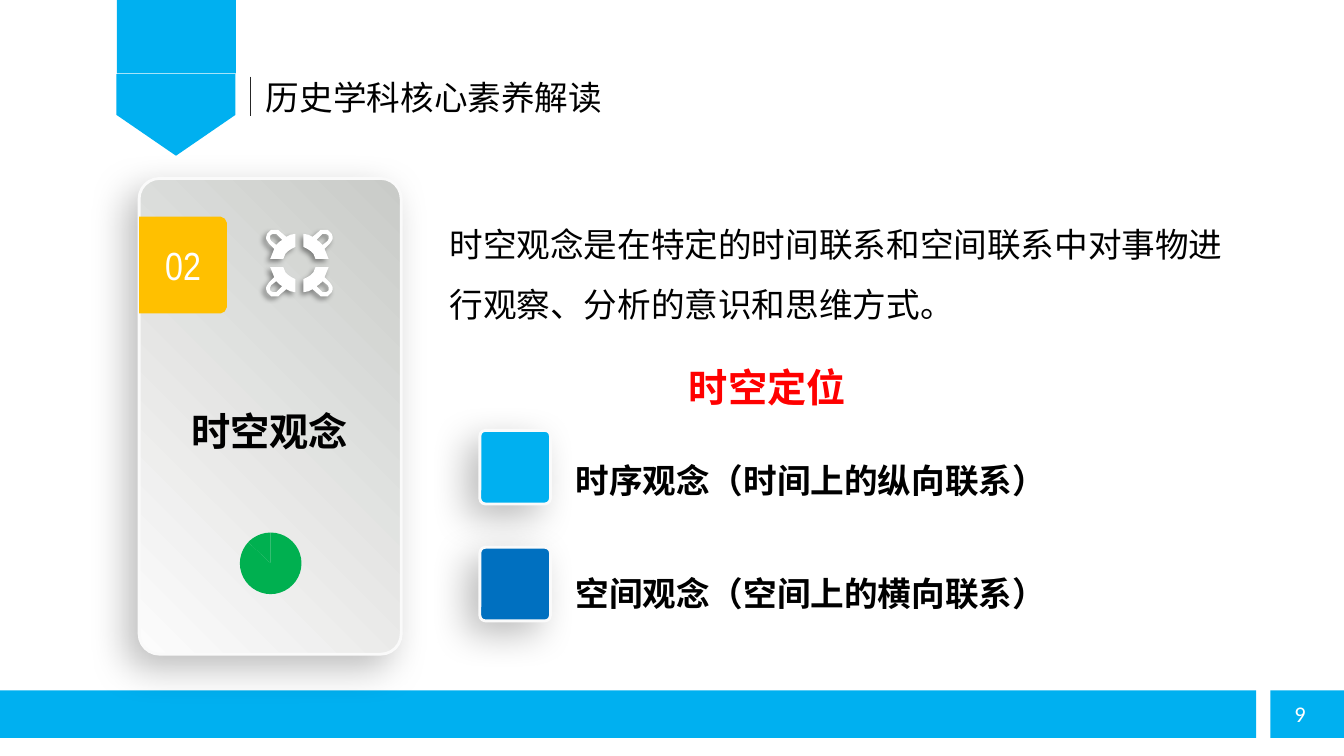
"""Build the slide on the concept of time and space in history teaching."""
import math

import lxml.etree
import pptx
import pptx.chart.data
import pptx.dml.color
import pptx.enum.chart
import pptx.enum.shapes
import pptx.enum.text
import pptx.oxml
import pptx.oxml.ns
import pptx.util

Inches = pptx.util.Inches
Pt = pptx.util.Pt
MSO_SHAPE = pptx.enum.shapes.MSO_SHAPE
ALIGN = pptx.enum.text.PP_ALIGN
qn = pptx.oxml.ns.qn

COLORS = {
    "sky": "00B0F0", "blue": "0070C0", "green": "00B050", "amber": "FFC000", "red": "FF0000",
    "white": "FFFFFF", "black": "000000", "rule": "262626", "edge": "FAFAFA",
    "card_dark": "C9CBC8", "card_light": "FCFCFC",
}
THEME = {
    **{name: pptx.dml.color.RGBColor.from_string(code) for name, code in COLORS.items()},
    "heading": Pt(28), "body": Pt(24), "chart": Pt(18), "page": Pt(16),
    "chinese": "Noto Sans CJK SC", "number": "Arial Narrow", "latin": "Calibri",
}


def dress(shape, fill=None, edged=False, shadow=None):
    """Set the fill, edge and shadow (opacity, blur, distance) of a shape."""
    shape.shadow.inherit = False
    if fill:
        shape.fill.solid()
        shape.fill.fore_color.rgb = THEME[fill]
    if edged:
        shape.line.color.rgb = THEME["edge"]
        shape.line.width = Pt(2)
    else:
        shape.line.fill.background()
    if shadow:
        opacity, blur, distance = shadow
        effects = shape._element.spPr.find(qn("a:effectLst"))
        outer = lxml.etree.SubElement(effects, qn("a:outerShdw"), blurRad=str(Pt(blur)),
                                      dist=str(Pt(distance)), dir=str(135 * 60000),
                                      algn="tr", rotWithShape="0")
        tint = lxml.etree.SubElement(outer, qn("a:srgbClr"), val=str(THEME["black"]))
        lxml.etree.SubElement(tint, qn("a:alpha"), val=str(opacity * 1000))


def write(box, words, size="body", font="chinese", color="black", bold=False,
          align=ALIGN.LEFT, spacing=None, wrap=True):
    """Add a text box with one paragraph."""
    frame = slide.shapes.add_textbox(*map(Inches, box)).text_frame
    paragraph = frame.paragraphs[0]
    run = paragraph.add_run()
    formats = (
        (frame, {"word_wrap": wrap,
                 "auto_size": pptx.enum.text.MSO_AUTO_SIZE.SHAPE_TO_FIT_TEXT}),
        (paragraph, {"alignment": align, "line_spacing": spacing}),
        (run, {"text": words}),
        (run.font, {"name": THEME[font], "size": THEME[size], "bold": bold}),
    )
    for target, values in formats:
        for key, value in values.items():
            setattr(target, key, value)
    run.font.color.rgb = THEME[color]
    lxml.etree.SubElement(run.font._element, qn("a:ea"), typeface=THEME[font])


deck = pptx.Presentation()
deck.slide_width, deck.slide_height = Inches(13.33), Inches(7.5)
slide = deck.slides.add_slide(deck.slide_layouts[6])

ribbon_tip = slide.shapes.add_shape(
    MSO_SHAPE.PENTAGON, *map(Inches, (1.34, 0.55, 0.81, 1.18)))
ribbon_tip.rotation = 90
dress(ribbon_tip, "sky")
for band in ((1.16, 0, 1.18, 0.73), (0, 6.85, 12.46, 0.47), (12.6, 6.85, 0.74, 0.47)):
    dress(slide.shapes.add_shape(MSO_SHAPE.RECTANGLE, *map(Inches, band)), "sky")

title_rule = slide.shapes.add_connector(
    pptx.enum.shapes.MSO_CONNECTOR.STRAIGHT, *map(Inches, (2.48, 0.76, 2.48, 1.15)))
title_rule.line.color.rgb = THEME["rule"]
title_rule.line.width = Pt(0.75)
lxml.etree.SubElement(title_rule._element.spPr, qn("a:effectLst"))

write((12.74, 6.9, 0.46, 0.37), "9", "page", "latin", "white", wrap=False)
write((2.54, 0.71, 3.76, 0.5), "历史学科核心素养解读")

CORNER = 0.078
SOFT_SHADOW = (26, 27, 12)
card = slide.shapes.add_shape(MSO_SHAPE.ROUNDED_RECTANGLE, *map(Inches, (1.38, 1.77, 2.6, 4.72)))
card.adjustments[0] = CORNER
card.fill.gradient()
card.fill.gradient_angle = 225
for stop, shade in zip(card.fill.gradient_stops, ("card_dark", "card_light")):
    stop.color.rgb = THEME[shade]
dress(card, edged=True, shadow=SOFT_SHADOW)

BADGE_WIDTH, BADGE_HEIGHT, BADGE_RADIUS = 87, 96, 8
badge_outline = []
for start, corner_y in ((-90, BADGE_RADIUS), (0, BADGE_HEIGHT - BADGE_RADIUS)):
    for step in range(0, 91, 15):
        turn = math.radians(start + step)
        badge_outline.append((BADGE_WIDTH - BADGE_RADIUS + BADGE_RADIUS * math.cos(turn),
                              corner_y + BADGE_RADIUS * math.sin(turn)))
badge_outline.append((0, BADGE_HEIGHT))
badge = slide.shapes.build_freeform(0, 0, scale=Inches(0.01))
badge.add_line_segments(badge_outline, close=True)
dress(badge.convert_to_shape(Inches(1.38), Inches(2.15)), "amber")

write((1.49, 2.34, 0.65, 0.57), "02", "heading", "number", "white", align=ALIGN.CENTER)
write((1.4, 3.99, 2.55, 0.57), "时空观念", "heading", bold=True, align=ALIGN.CENTER)

shares = pptx.chart.data.CategoryChartData()
shares.categories = ["1", "2"]
shares.add_series("Series 1", (87, 13))
pie = slide.shapes.add_chart(pptx.enum.chart.XL_CHART_TYPE.PIE,
                             *map(Inches, (2.02, 5.15, 1.33, 0.88)), shares).chart
pie.has_legend = False
pie.has_title = False
pie.plots[0].vary_by_categories = False
for key, value in {"name": THEME["latin"], "size": THEME["chart"]}.items():
    setattr(pie.font, key, value)
pie.font.color.rgb = THEME["black"]
for index in range(2):
    slice_format = pie.plots[0].series[0].points[index].format
    slice_format.fill.solid()
    slice_format.fill.fore_color.rgb = THEME["green"]
    slice_format.line.fill.background()
plot_area = pie._chartSpace.find(".//" + qn("c:plotArea"))
for old_layout in plot_area.findall(qn("c:layout")):
    plot_area.remove(old_layout)
layout = lxml.etree.Element(qn("c:layout"))
plot_area.insert(0, layout)
manual = lxml.etree.SubElement(layout, qn("c:manualLayout"))
for tag, value in {"layoutTarget": "inner", "xMode": "edge", "yMode": "edge",
                   "x": "0.27", "y": "0.15", "w": "0.46", "h": "0.7"}.items():
    lxml.etree.SubElement(manual, qn("c:" + tag), val=value)

ARM = [(16, 4), (29, 4), (27, 9), (25, 14), (30, 19), (32, 22), (33, 24), (33, 26), (32, 29),
       (30, 31), (28, 33), (23, 33), (21, 33), (19, 31), (13, 26), (9, 28), (4, 29), (4, 16),
       (8, 14), (11, 12), (14, 9)]
ARM_HOLE = [(23, 18), (20, 21), (17, 23), (22, 28), (23, 29), (26, 29), (28, 28), (29, 27),
            (29, 24), (28, 22)]
contours = [[(x * side, y * level) for x, y in outline]
            for side in (1, -1) for level in (1, -1) for outline in (ARM, ARM_HOLE)]
icon = slide.shapes.build_freeform(*contours[0][0], scale=Inches(0.01))
for contour in contours:
    if contour is not contours[0]:
        icon.move_to(*contour[0])
    icon.add_line_segments(contour[1:], close=True)
dress(icon.convert_to_shape(Inches(2.97), Inches(2.61)), "white", shadow=(40, 4, 3))

write((4.36, 1.97, 7.91, 1.25),
      "时空观念是在特定的时间联系和空间联系中对事物进行观察、分析的意识和思维方式。", spacing=1.5)
write((5.61, 3.56, 4, 0.57), "时空定位", "heading", color="red", bold=True, align=ALIGN.CENTER)
for marker_top, text_top, color, aspect in (
        (4.27, 4.31, "sky", "时序观念（时间上的纵向联系）"),
        (5.43, 5.43, "blue", "空间观念（空间上的横向联系）")):
    marker = slide.shapes.add_shape(
        MSO_SHAPE.ROUNDED_RECTANGLE, *map(Inches, (4.76, marker_top, 0.7, 0.73)))
    marker.adjustments[0] = CORNER
    dress(marker, color, edged=True, shadow=SOFT_SHADOW)
    write((5.61, text_top, 6.67, 0.64), aspect, bold=True, spacing=1.5)

deck.save("out.pptx")
